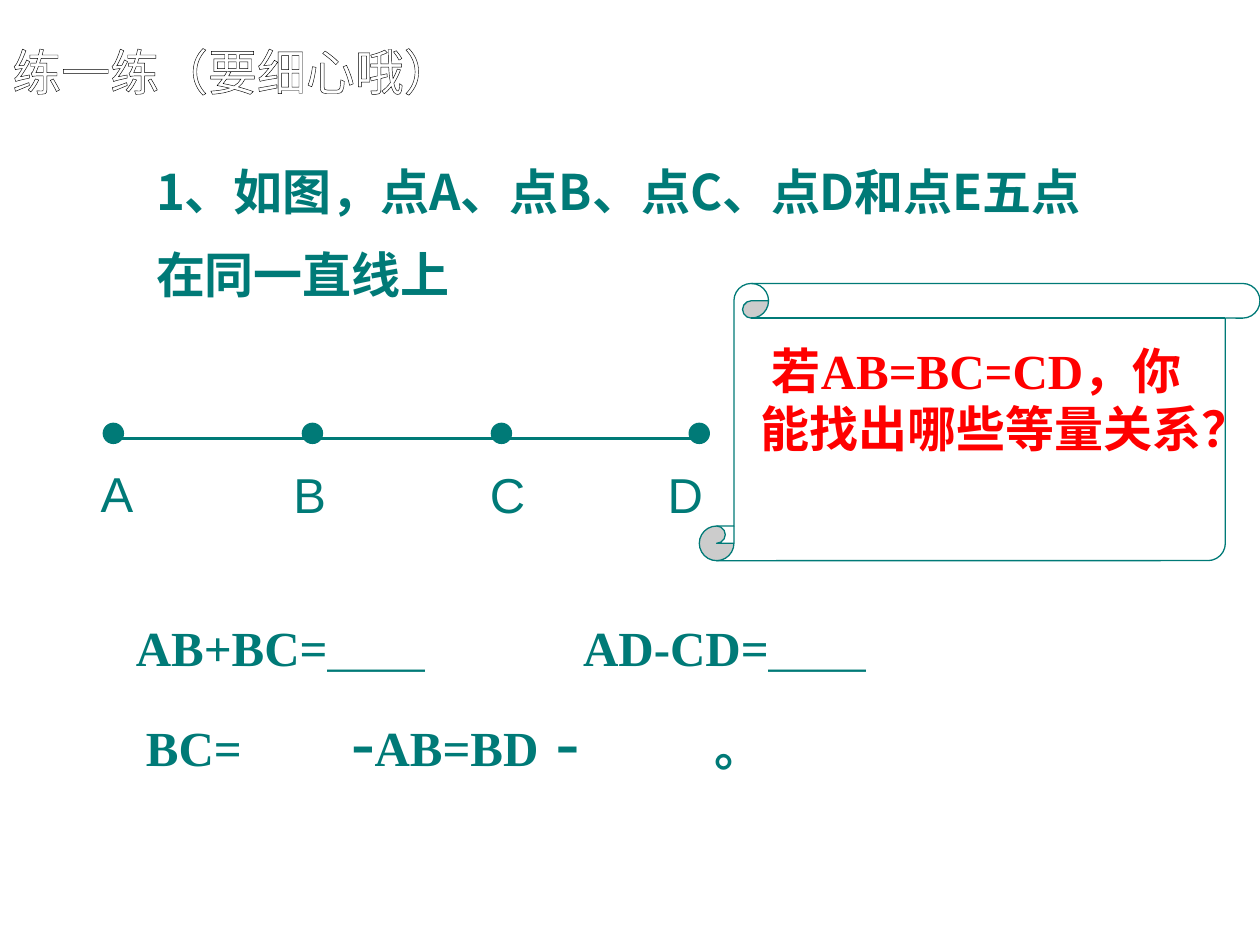
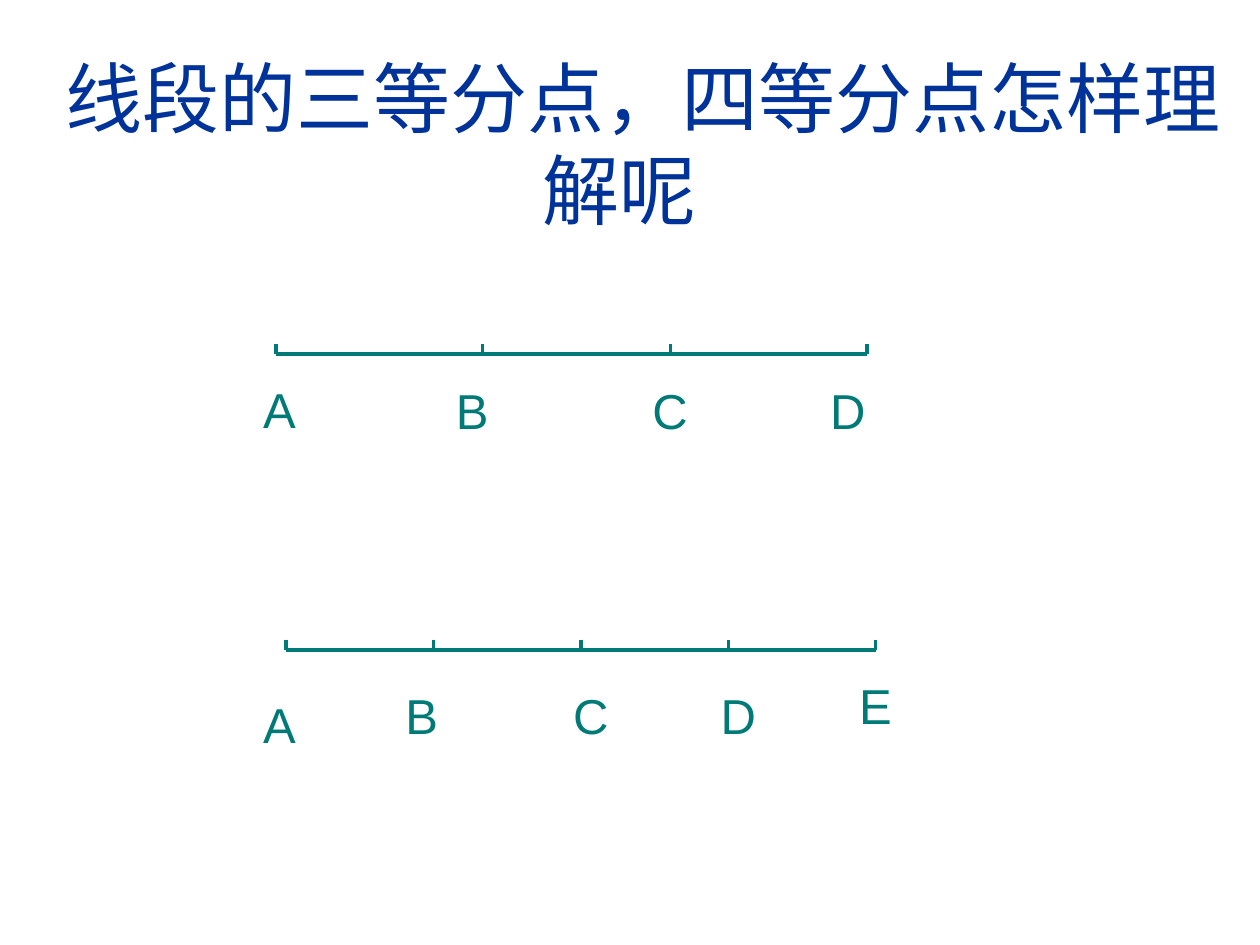
from lxml.etree import SubElement
from pptx import Presentation
from pptx.dml.color import RGBColor
from pptx.enum.shapes import MSO_CONNECTOR, MSO_SHAPE
from pptx.enum.text import MSO_ANCHOR, MSO_AUTO_SIZE, PP_ALIGN
from pptx.oxml.ns import qn
from pptx.util import Inches, Pt

TEAL, WHITE, RED, NAVY, BLACK = "007A77", "FFFFFF", "FF0000", "003399", "000000"
SANS, SERIF, HAN = "Arial", "Times New Roman", "Noto Sans CJK SC"
THIRDS = [0, 1.64, 3.13, 4.69]
MARKS = [("A", -0.2, 0.15, 0.6), ("B", 1.33, 0.16, 0.7),
         ("C", 2.89, 0.16, 0.4), ("D", 4.3, 0.16, 0.91)]


def color(code):
    return RGBColor.from_string(code)


def write(para, text, size=28, font=SANS, ink=TEAL, bold=False, under=False, edge=None):
    run = para.add_run()
    run.text = text
    face = run.font
    face.size, face.name, face.bold, face.underline = Pt(size), font, bold, under
    face.color.rgb = color(ink)
    props = run._r.get_or_add_rPr()
    east = props.makeelement(qn("a:ea"), {"typeface": HAN})
    props.find(qn("a:latin")).addnext(east)
    if edge:
        line = props.makeelement(qn("a:ln"), {"w": str(Pt(0.75))})
        fill = SubElement(line, qn("a:solidFill"))
        SubElement(fill, qn("a:srgbClr"), val=edge)
        props.insert(0, line)


class Deck:
    def __init__(self):
        self.file = Presentation()
        self.file.slide_width, self.file.slide_height = Inches(10), Inches(7.5)
        self.slide = None

    def page(self):
        self.slide = self.file.slides.add_slide(self.file.slide_layouts[6])
        fill = self.slide.background.fill
        fill.solid()
        fill.fore_color.rgb = color(WHITE)

    def text(self, x, y, w, h, *lines, wrap=True, align=PP_ALIGN.LEFT,
             anchor=MSO_ANCHOR.TOP, grow=True, **look):
        box = self.slide.shapes.add_textbox(Inches(x), Inches(y), Inches(w), Inches(h))
        frame = box.text_frame
        frame.word_wrap, frame.vertical_anchor = wrap, anchor
        frame.auto_size = MSO_AUTO_SIZE.SHAPE_TO_FIT_TEXT if grow else MSO_AUTO_SIZE.NONE
        for i, line in enumerate(lines):
            para = frame.add_paragraph() if i else frame.paragraphs[0]
            para.alignment = align
            if i:
                para.space_before = Pt(14)
            if line:
                write(para, line, **look)
        return frame.paragraphs[0]

    def shape(self, kind, x, y, w, h, fill):
        item = self.slide.shapes.add_shape(kind, Inches(x), Inches(y), Inches(w), Inches(h))
        item.shadow.inherit = False
        item.fill.solid()
        item.fill.fore_color.rgb = color(fill)
        item.line.color.rgb = color(TEAL)
        item.line.width = Pt(0.75)
        return item

    def line(self, x1, y1, x2, y2, width):
        item = self.slide.shapes.add_connector(
            MSO_CONNECTOR.STRAIGHT, Inches(x1), Inches(y1), Inches(x2), Inches(y2))
        item.line.color.rgb = color(TEAL)
        item.line.width = Pt(width)
        SubElement(item._element.spPr, qn("a:effectLst"))

    def ruler(self, x, y, ticks, marks):
        self.line(x, y, x + ticks[-1], y, 2.25)
        for tick in ticks:
            self.line(x + tick, y - 0.08, x + tick, y, 2)
        for name, dx, dy, w in marks:
            self.text(x + dx, y + dy, w, 0.57, name)

    def tabs(self, para, *stops):
        items = SubElement(para._p.get_or_add_pPr(), qn("a:tabLst"))
        for stop in stops:
            SubElement(items, qn("a:tab"), pos=str(Inches(stop)), algn="l")


def drill(deck):
    deck.page()
    bold = dict(font=SERIF, bold=True)
    deck.text(1.14, 1.23, 8.11, 1.27, "1、如图，点A、点B、点C、点D和点E五点",
              "在同一直线上", font=HAN, bold=True)
    deck.text(0.98, 4.85, 2.7, 0.57, "AB+BC=＿＿", **bold)
    deck.text(4.53, 4.85, 2.76, 0.57, "AD-CD=＿＿", **bold)
    para = deck.text(1.06, 5.48, 5.28, 0.77, "")
    deck.tabs(para, 1.63, 3.64, 4.51)
    for part, size, under in [("BC=", 28, False), ("\t", 28, True), ("-", 40, False),
                              ("AB=BD", 28, False), (" -", 40, False), ("\t", 28, False),
                              ("\t", 28, True), ("。", 28, False)]:
        write(para, part, size=size, under=under, **bold)
    deck.text(0.35, 0.28, 2.99, 0.79, "练一练（要细心哦）", wrap=False, grow=False,
              align=PP_ALIGN.CENTER, font=HAN, ink=WHITE, edge=BLACK)
    scroll = deck.shape(MSO_SHAPE.VERTICAL_SCROLL, 5.55, 2.25, 4.45, 2.2, WHITE)
    scroll.adjustments[0] = 0.125
    deck.text(5.94, 2.65, 3.7, 1.5, " 若AB=BC=CD，你能找出哪些等量关系？", ink=RED, **bold)
    deck.ruler(0.9, 3.48, THIRDS, MARKS)
    for x in (0.82, 2.4, 3.9, 5.47):
        deck.shape(MSO_SHAPE.OVAL, x, 3.36, 0.16, 0.16, TEAL)


def parts(deck):
    deck.page()
    title = deck.text(0, 0.47, 9.84, 1.33, "线段的三等分点，四等分点怎样理解呢", size=44,
                      ink=NAVY, align=PP_ALIGN.CENTER, anchor=MSO_ANCHOR.MIDDLE, grow=False)
    title._p.get_or_add_pPr().set("indent", str(Inches(0.37)))
    deck.ruler(2.19, 2.81, THIRDS, MARKS)
    deck.ruler(2.27, 5.16, [1.17 * i for i in range(5)],
               [("A", -0.28, 0.3, 0.6), ("B", 0.85, 0.23, 0.7), ("C", 2.18, 0.23, 0.4),
                ("D", 3.35, 0.23, 0.91), ("E", 4.45, 0.15, 0.91)])


def main():
    deck = Deck()
    drill(deck)
    parts(deck)
    deck.file.save("out.pptx")


if __name__ == "__main__":
    main()
